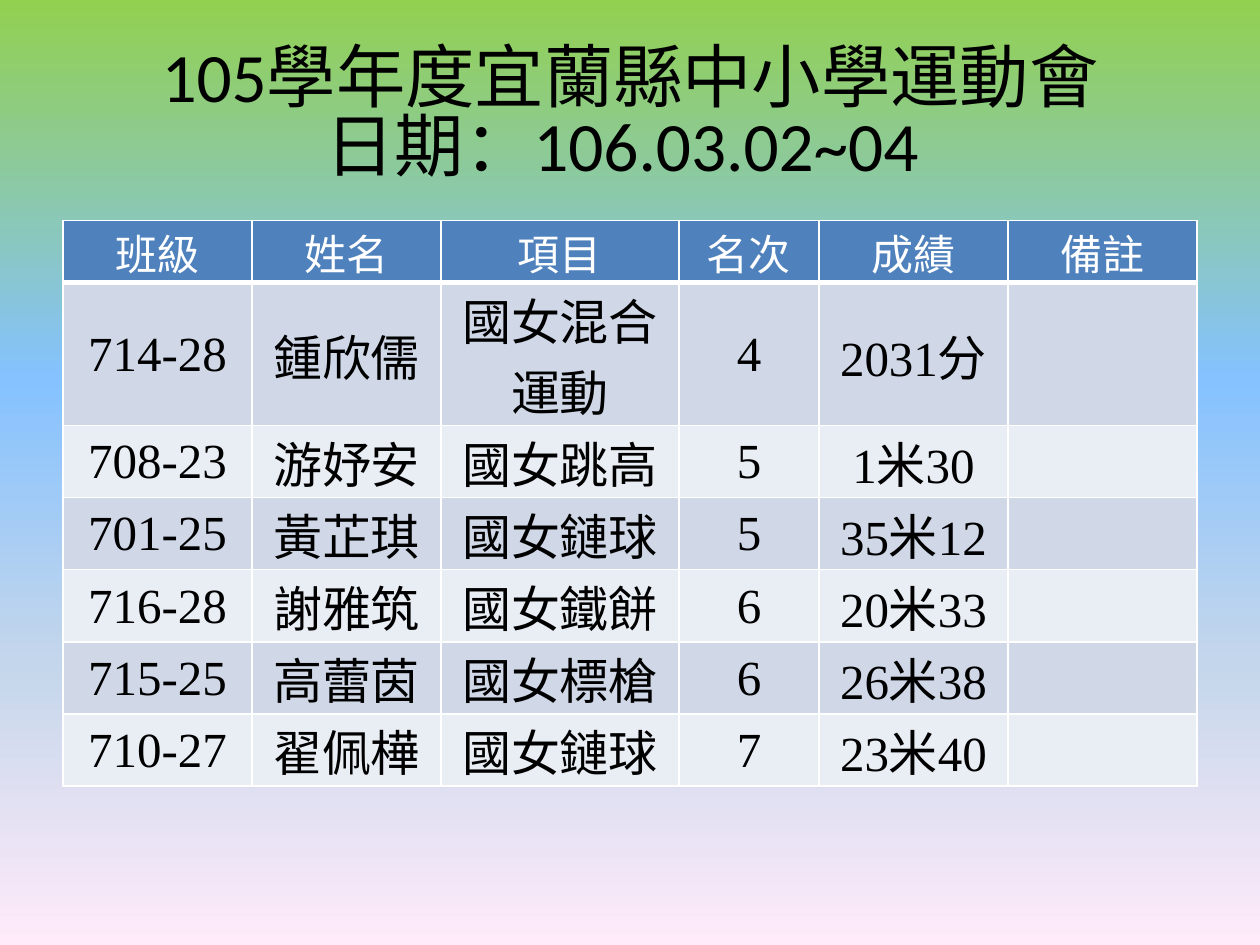
import lxml.etree
import pptx
import pptx.dml.color
import pptx.enum.text
import pptx.oxml.ns
import pptx.util

Pt = pptx.util.Pt
qn = pptx.oxml.ns.qn
SubElement = lxml.etree.SubElement

COLORS = {
    "title": "000000",
    "header_text": "FFFFFF",
    "body_text": "000000",
    "header": "4F81BD",
    "odd_row": "D0D8E8",
    "even_row": "E9EDF4",
    "border": "FFFFFF",
}
BACKGROUND_STOPS = {0: "92D050", 40: "85C2FF", 70: "C4D6EB", 100: "FFEBFA"}
CJK_FONT = "Noto Sans CJK TC"
TITLE_SIZE = 39.6
CELL_FORMAT = {
    "margin_left": Pt(0.72),
    "margin_right": Pt(0.72),
    "margin_top": Pt(0.72),
    "margin_bottom": Pt(0),
    "vertical_anchor": pptx.enum.text.MSO_ANCHOR.MIDDLE,
}
COLUMN_WIDTHS = [108, 108, 136, 80, 108, 108]
ROW_HEIGHT = 29.5
RESULTS = [
    ["班級", "姓名", "項目", "名次", "成績", "備註"],
    ["714-28", "鍾欣儒", "國女混合運動", "4", "2031分", ""],
    ["708-23", "游妤安", "國女跳高", "5", "1米30", ""],
    ["701-25", "黃芷琪", "國女鏈球", "5", "35米12", ""],
    ["716-28", "謝雅筑", "國女鐵餅", "6", "20米33", ""],
    ["715-25", "高蕾茵", "國女標槍", "6", "26米38", ""],
    ["710-27", "翟佩樺", "國女鏈球", "7", "23米40", ""],
]


def rgb(name):
    return pptx.dml.color.RGBColor.from_string(COLORS[name])


def format_paragraph(paragraph, size, font_name, color):
    paragraph.alignment = pptx.enum.text.PP_ALIGN.CENTER
    font_format = {"name": font_name, "size": Pt(size), "bold": False}
    for run in paragraph.runs:
        for attribute, value in font_format.items():
            setattr(run.font, attribute, value)
        run.font.color.rgb = rgb(color)
        latin = run.font._element.find(qn("a:latin"))
        east_asian = lxml.etree.Element(qn("a:ea"), typeface=CJK_FONT)
        latin.addnext(east_asian)


def paint_background(slide):
    fill = slide.background.fill
    fill.gradient()
    fill.gradient_angle = 270
    stops = next(slide.element.iter(qn("a:gsLst")))
    for stop in list(stops):
        stops.remove(stop)
    for percent, color in BACKGROUND_STOPS.items():
        stop = SubElement(stops, qn("a:gs"), pos=str(percent * 1000))
        SubElement(stop, qn("a:srgbClr"), val=color)


def add_title(slide, text):
    title = slide.shapes.title
    place = {"left": 36, "top": 21.6, "width": 648, "height": 90}
    for attribute, value in place.items():
        setattr(title, attribute, Pt(value))
    frame = title.text_frame
    frame.text = text
    frame.word_wrap = True
    frame.auto_size = pptx.enum.text.MSO_AUTO_SIZE.NONE
    frame.vertical_anchor = pptx.enum.text.MSO_ANCHOR.MIDDLE
    heading = frame.paragraphs[0]
    heading.line_spacing = 0.83
    format_paragraph(heading, TITLE_SIZE, "Calibri", "title")
    # A line break keeps the layout's larger size unless it has its own.
    for line_break in title.element.iter(qn("a:br")):
        SubElement(line_break, qn("a:rPr"), sz=str(round(TITLE_SIZE * 100)))


def add_borders(cell, bottom_width):
    """Call before filling the cell: borders come first in its properties."""
    properties = cell._tc.get_or_add_tcPr()
    widths = {"a:lnL": 1, "a:lnR": 1, "a:lnT": 1, "a:lnB": bottom_width}
    for side, width in widths.items():
        line = SubElement(properties, qn(side), w=str(Pt(width)))
        fill = SubElement(line, qn("a:solidFill"))
        SubElement(fill, qn("a:srgbClr"), val=COLORS["border"])


def fill_cell(cell, text, is_header, fill_color):
    add_borders(cell, 3 if is_header else 1)
    cell.fill.solid()
    cell.fill.fore_color.rgb = rgb(fill_color)
    for attribute, value in CELL_FORMAT.items():
        setattr(cell, attribute, value)
    if text:
        cell.text = text
        size, color = (24, "header_text") if is_header else (28, "body_text")
        format_paragraph(cell.text_frame.paragraphs[0], size,
                         "Times New Roman", color)


def add_results(slide):
    table = slide.shapes.add_table(
        len(RESULTS), len(COLUMN_WIDTHS), Pt(36), Pt(126),
        Pt(sum(COLUMN_WIDTHS)), Pt(ROW_HEIGHT * len(RESULTS))).table
    for column, width in zip(table.columns, COLUMN_WIDTHS):
        column.width = Pt(width)
    for r, entries in enumerate(RESULTS):
        band = "odd_row" if r % 2 else "even_row"
        for c, text in enumerate(entries):
            fill_cell(table.cell(r, c), text, r == 0, band if r else "header")


def main():
    presentation = pptx.Presentation()
    presentation.slide_width = Pt(720)
    presentation.slide_height = Pt(540)
    slide = presentation.slides.add_slide(presentation.slide_layouts[5])
    paint_background(slide)
    add_title(slide, "105學年度宜蘭縣中小學運動會\v日期：106.03.02~04 ")
    add_results(slide)
    presentation.save("out.pptx")


if __name__ == "__main__":
    main()
